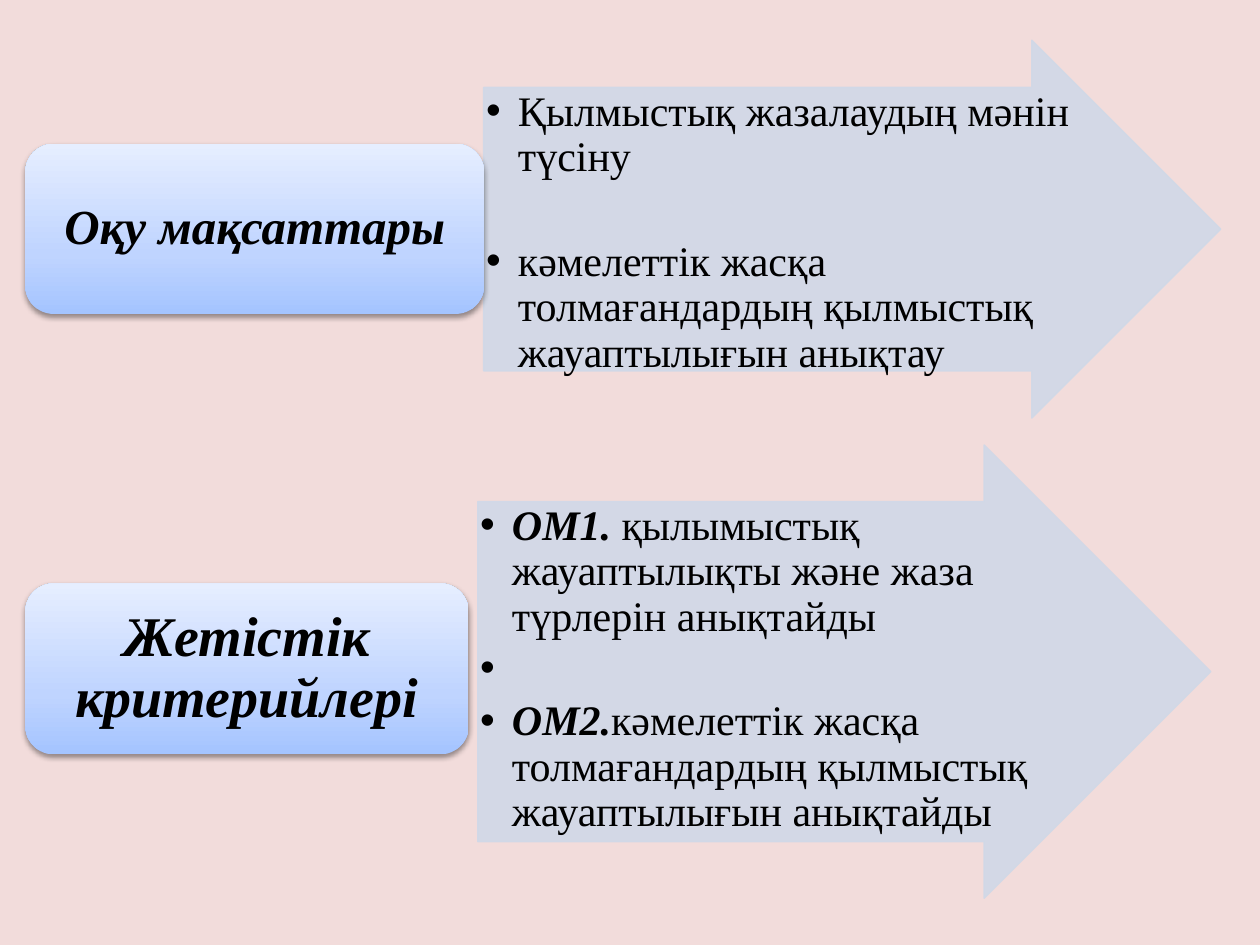
from dataclasses import dataclass

from lxml.etree import SubElement
from pptx import Presentation
from pptx.dml.color import RGBColor
from pptx.enum.shapes import MSO_SHAPE
from pptx.enum.text import MSO_ANCHOR, MSO_AUTO_SIZE, PP_ALIGN
from pptx.oxml.ns import qn
from pptx.util import Cm, Pt


@dataclass(frozen=True)
class Theme:
    """Colours, font and type sizes of the slide."""
    background: str = "F2DCDB"
    arrow: str = "D0D8E8"
    ink: str = "000000"
    label_stops: tuple = ((0, "A4C4FF"), (35, "BFD4FF"), (100, "E6EEFF"))
    font: str = "Times New Roman"
    list_size: int = 24
    list_gap: int = 4
    wide_gap: int = 34


THEME = Theme()

GOALS = {
    "label": "Оқу мақсаттары",
    "label_size": 28,
    "label_box": (0.51, 2.9, 9.25, 3.43),
    "arrow_box": (9.75, 0.81, 14.86, 7.62),
    "gap": THEME.wide_gap,
    "items": [
        [("Қылмыстық жазалаудың мәнін түсіну", False)],
        [("кәмелеттік жасқа толмағандардың қылмыстық жауаптылығын анықтау", False)],
    ],
}
CRITERIA = {
    "label": "Жетістік критерийлері",
    "label_size": 32,
    "label_box": (0.51, 11.76, 8.94, 3.45),
    "arrow_box": (9.63, 8.97, 14.78, 9.14),
    "gap": THEME.list_gap,
    "items": [
        [("ОМ1. ", True), ("қылымыстық жауаптылықты және жаза түрлерін анықтайды", False)],
        [(" ", True)],
        [("ОМ2.", True), ("кәмелеттік жасқа толмағандардың қылмыстық жауаптылығын анықтайды", False)],
    ],
}


def add_color(parent, color, alpha=100):
    """Append an RGB colour with an opacity in percent."""
    node = SubElement(parent, qn("a:srgbClr"), val=color)
    SubElement(node, qn("a:alpha"), val=str(alpha * 1000))


def set_margins(frame, side, top):
    """Set equal left and right, and equal top and bottom margins."""
    frame.margin_left = frame.margin_right = Cm(side)
    frame.margin_top = frame.margin_bottom = Cm(top)


def add_run(paragraph, text, size, emphasis):
    """Add one run, bold and italic when emphasised."""
    run = paragraph.add_run()
    run.text = text
    run.font.name = THEME.font
    run.font.size = Pt(size)
    run.font.bold = run.font.italic = emphasis
    run.font.color.rgb = RGBColor.from_string(THEME.ink)


def add_arrow(slide, box):
    """Draw a slightly transparent block arrow."""
    arrow = slide.shapes.add_shape(MSO_SHAPE.RIGHT_ARROW, *map(Cm, box))
    arrow.adjustments[0] = 0.75
    arrow.shadow.inherit = False
    arrow.line.width = Pt(0.75)
    for fill in (arrow.fill, arrow.line.fill):
        fill.solid()
        fill.fore_color.rgb = RGBColor.from_string(THEME.arrow)
    for color in arrow.element.spPr.iter(qn("a:srgbClr")):
        SubElement(color, qn("a:alpha"), val="90000")


def place_list(slide, placeholder, section):
    """Lay the bulleted list over the flat part of its arrow."""
    left, top, width, height = section["arrow_box"]
    placeholder.left, placeholder.top = Cm(left), Cm(top + height / 8)
    placeholder.width = Cm(width - height * 3 / 8)
    placeholder.height = Cm(height * 3 / 4)
    slide.shapes.element.append(placeholder.element)
    frame = placeholder.text_frame
    frame.word_wrap = True
    frame.auto_size = MSO_AUTO_SIZE.NONE
    frame.vertical_anchor = MSO_ANCHOR.TOP
    set_margins(frame, 0.05, 0.05)
    for index, item in enumerate(section["items"]):
        paragraph = frame.add_paragraph() if index else frame.paragraphs[0]
        paragraph.line_spacing = 0.9
        paragraph.space_before = Pt(0)
        paragraph.space_after = Pt(section["gap"])
        for text, emphasis in item:
            add_run(paragraph, text, THEME.list_size, emphasis)
        properties = paragraph._p.get_or_add_pPr()
        properties.set("marL", str(Cm(0.64)))
        properties.set("indent", str(-Cm(0.64)))
        SubElement(properties, qn("a:buChar"), char="•")


def add_label(slide, section):
    """Draw a rounded label with a gradient and a soft shadow."""
    label = slide.shapes.add_shape(MSO_SHAPE.ROUNDED_RECTANGLE, *map(Cm, section["label_box"]))
    label.line.fill.background()
    label.fill.gradient()
    label.fill.gradient_angle = 90
    stops = label.element.spPr.find(".//" + qn("a:gsLst"))
    for stop in list(stops):
        stops.remove(stop)
    for position, color in THEME.label_stops:
        add_color(SubElement(stops, qn("a:gs"), pos=str(position * 1000)), color)
    label.shadow.inherit = False
    effects = label.element.spPr.find(qn("a:effectLst"))
    shadow = SubElement(effects, qn("a:outerShdw"), blurRad=str(Pt(3.1)),
                        dist=str(Pt(1.6)), dir="5400000", rotWithShape="0")
    add_color(shadow, THEME.ink, 38)
    frame = label.text_frame
    frame.word_wrap = True
    frame.vertical_anchor = MSO_ANCHOR.MIDDLE
    set_margins(frame, 0.32, 0.16)
    paragraph = frame.paragraphs[0]
    paragraph.alignment = PP_ALIGN.CENTER
    paragraph.line_spacing = 0.9
    add_run(paragraph, section["label"], section["label_size"], True)


def main():
    """Build the slide and save it."""
    deck = Presentation()
    deck.slide_width, deck.slide_height = Cm(25.4), Cm(19.05)
    slide = deck.slides.add_slide(deck.slide_layouts.get_by_name("Two Content"))
    slide.background.fill.solid()
    slide.background.fill.fore_color.rgb = RGBColor.from_string(THEME.background)
    heading, *lists = slide.placeholders
    slide.shapes.element.remove(heading.element)
    for placeholder, section in zip(lists, (GOALS, CRITERIA)):
        add_arrow(slide, section["arrow_box"])
        place_list(slide, placeholder, section)
        add_label(slide, section)
    deck.save("out.pptx")


if __name__ == "__main__":
    main()
